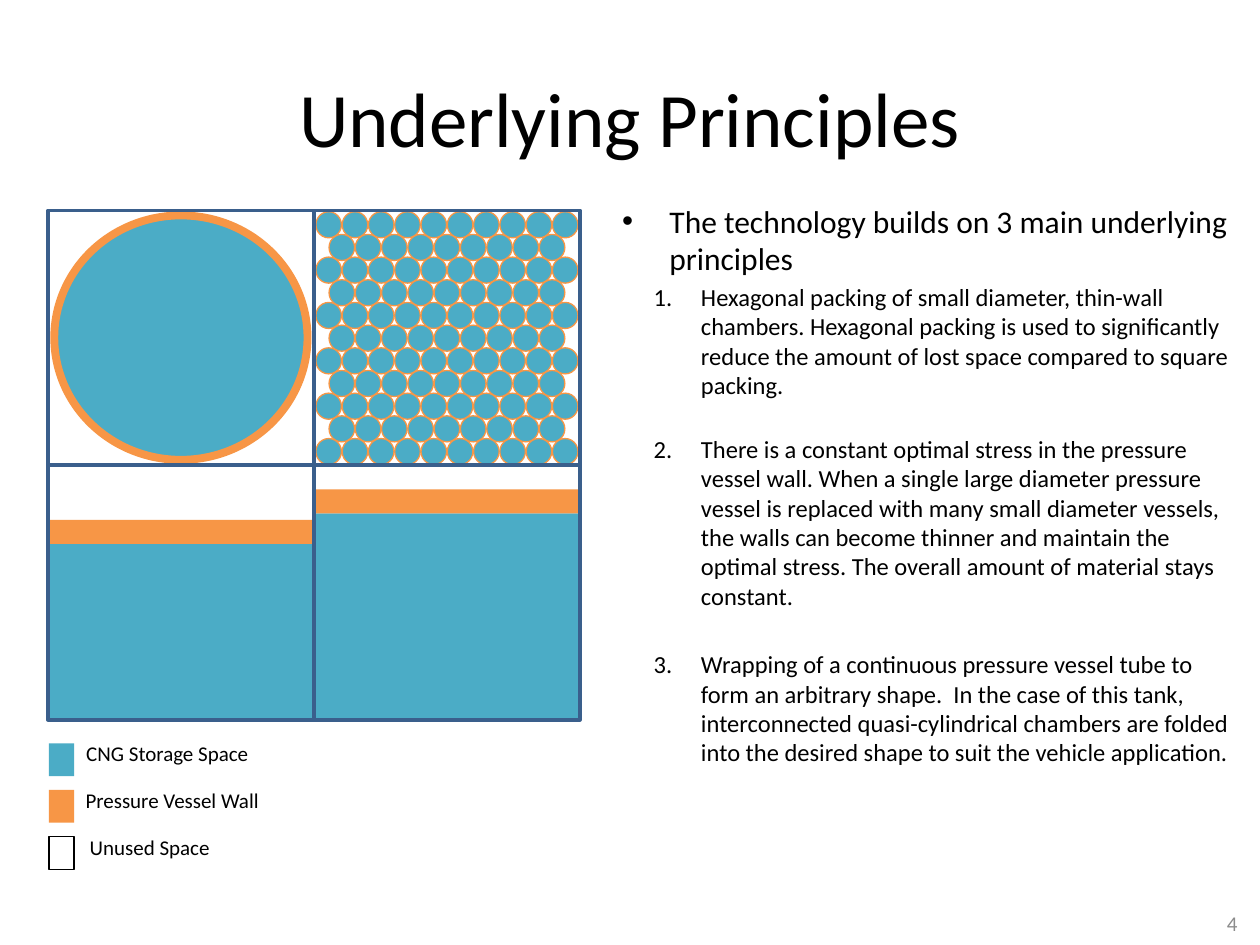
"""Build the Underlying Principles slide about tube-packed gas storage."""
from lxml.etree import SubElement
from pptx import Presentation
from pptx.dml.color import RGBColor
from pptx.enum.shapes import MSO_SHAPE
from pptx.enum.text import MSO_ANCHOR, PP_ALIGN
from pptx.oxml.ns import qn
from pptx.util import Pt

STORAGE = RGBColor(0x4B, 0xAC, 0xC6)
WALL = RGBColor(0xF7, 0x96, 0x46)
FRAME = RGBColor(0x3A, 0x5F, 0x8C)
GRAY = RGBColor(0x8C, 0x8C, 0x8C)
BLACK = RGBColor(0, 0, 0)
WHITE = RGBColor(0xFF, 0xFF, 0xFF)


def add_figure(group, kind, box, fill=None, line=None, width=0.75):
    shape = group.shapes.add_shape(kind, *[Pt(length) for length in box])
    shape.shadow.inherit = False
    if fill is None:
        shape.fill.background()
    else:
        shape.fill.solid()
        shape.fill.fore_color.rgb = fill
    if line is None:
        shape.line.fill.background()
    else:
        shape.line.color.rgb = line
        shape.line.width = Pt(width)


def add_text(paragraph, text, size, color=BLACK):
    run = paragraph.add_run()
    run.text = text
    run.font.name = "Calibri"
    run.font.size = Pt(size)
    run.font.color.rgb = color


presentation = Presentation()
presentation.slide_width = Pt(720)
presentation.slide_height = Pt(540)
slide = presentation.slides.add_slide(presentation.slide_layouts[5])

title = slide.shapes.title
title.left, title.top, title.width, title.height = Pt(36), Pt(21.6), Pt(648), Pt(90)
title.text_frame.vertical_anchor = MSO_ANCHOR.MIDDLE
title_paragraph = title.text_frame.paragraphs[0]
title_paragraph.alignment = PP_ALIGN.CENTER
add_text(title_paragraph, "Underlying Principles", 44)

page_number = slide.shapes.add_textbox(Pt(666), Pt(514.8), Pt(48.2), Pt(25.2))
page_number.text_frame.word_wrap = True
page_number.text_frame.vertical_anchor = MSO_ANCHOR.MIDDLE
page_number.text_frame.paragraphs[0].alignment = PP_ALIGN.RIGHT
add_text(page_number.text_frame.paragraphs[0], "4", 12, GRAY)

principles = [
    ("The technology builds on 3 main underlying principles", 0, 18, 0),
    ("Hexagonal packing of small diameter, thin-wall chambers. Hexagonal packing is used "
     "to significantly reduce the amount of lost space compared to square packing.", 1, 14, 2.8),
    ("There is a constant optimal stress in the pressure vessel wall. When a single large "
     "diameter pressure vessel is replaced with many small diameter vessels, the walls can "
     "become thinner and maintain the optimal stress. The overall amount of material stays "
     "constant.", 1, 14, 19.5),
    ("Wrapping of a continuous pressure vessel tube to form an arbitrary shape.  In the case "
     "of this tank, interconnected quasi-cylindrical chambers are folded into the desired "
     "shape to suit the vehicle application.", 1, 14, 22.2),
]
body = slide.shapes.add_textbox(Pt(348.5), Pt(111.6), Pt(365), Pt(385.2))
body.text_frame.word_wrap = True
for index, (text, level, size, space_before) in enumerate(principles):
    paragraph = body.text_frame.add_paragraph() if index else body.text_frame.paragraphs[0]
    paragraph.level = level
    properties = paragraph._p.get_or_add_pPr()
    properties.set("marL", str(Pt(45 if level else 27)))
    properties.set("indent", str(Pt(-27)))
    if level:
        SubElement(properties, qn("a:buFont"), typeface="+mj-lt")
        SubElement(properties, qn("a:buAutoNum"), type="arabicPeriod")
    else:
        SubElement(properties, qn("a:buFont"), typeface="Arial")
        SubElement(properties, qn("a:buChar"), char="•")
    paragraph.space_before = Pt(space_before)
    add_text(paragraph, text, size)

left, top, cell_width, cell_height = 27.4, 120.2, 152, 145.6
bottom = top + 2 * cell_height
wall_height = 13.7
diagram = slide.shapes.add_group_shape()
for column, storage_height in enumerate([100.6, 118]):
    x = left + column * cell_width
    storage_top = bottom - storage_height
    add_figure(diagram, MSO_SHAPE.RECTANGLE, (x, storage_top, cell_width, storage_height), STORAGE)
    add_figure(diagram, MSO_SHAPE.RECTANGLE,
               (x, storage_top - wall_height, cell_width, wall_height), WALL)

add_figure(diagram, MSO_SHAPE.OVAL, (31, 123.1, 144.7, 139.7), STORAGE, WALL, 4.5)
for row in range(11):
    offset = row % 2
    for column in range(10 - offset):
        x = 180.5 + 15.02 * (column + offset / 2)
        add_figure(diagram, MSO_SHAPE.OVAL, (x, 121 + 12.96 * row, 14.6, 14.9), STORAGE, WALL)

for row in range(2):
    for column in range(2):
        cell = (left + column * cell_width, top + row * cell_height, cell_width, cell_height)
        add_figure(diagram, MSO_SHAPE.RECTANGLE, cell, line=FRAME, width=2)

legend = slide.shapes.add_group_shape()
entries = [
    ("CNG Storage Space", STORAGE, None, 42.2, 108),
    ("Pressure Vessel Wall", WALL, None, 41.8, 114.5),
    ("Unused Space", WHITE, BLACK, 44.2, 83.5),
]
for index, (label, fill, line, label_left, label_width) in enumerate(entries):
    y = 424.8 + 26.64 * index
    add_figure(legend, MSO_SHAPE.RECTANGLE, (28, y, 14.4, 18.7), fill, line)
    label_box = legend.shapes.add_textbox(Pt(label_left), Pt(y - 5), Pt(label_width), Pt(21.8))
    label_box.text_frame.word_wrap = False
    add_text(label_box.text_frame.paragraphs[0], label, 12)

presentation.save("out.pptx")
